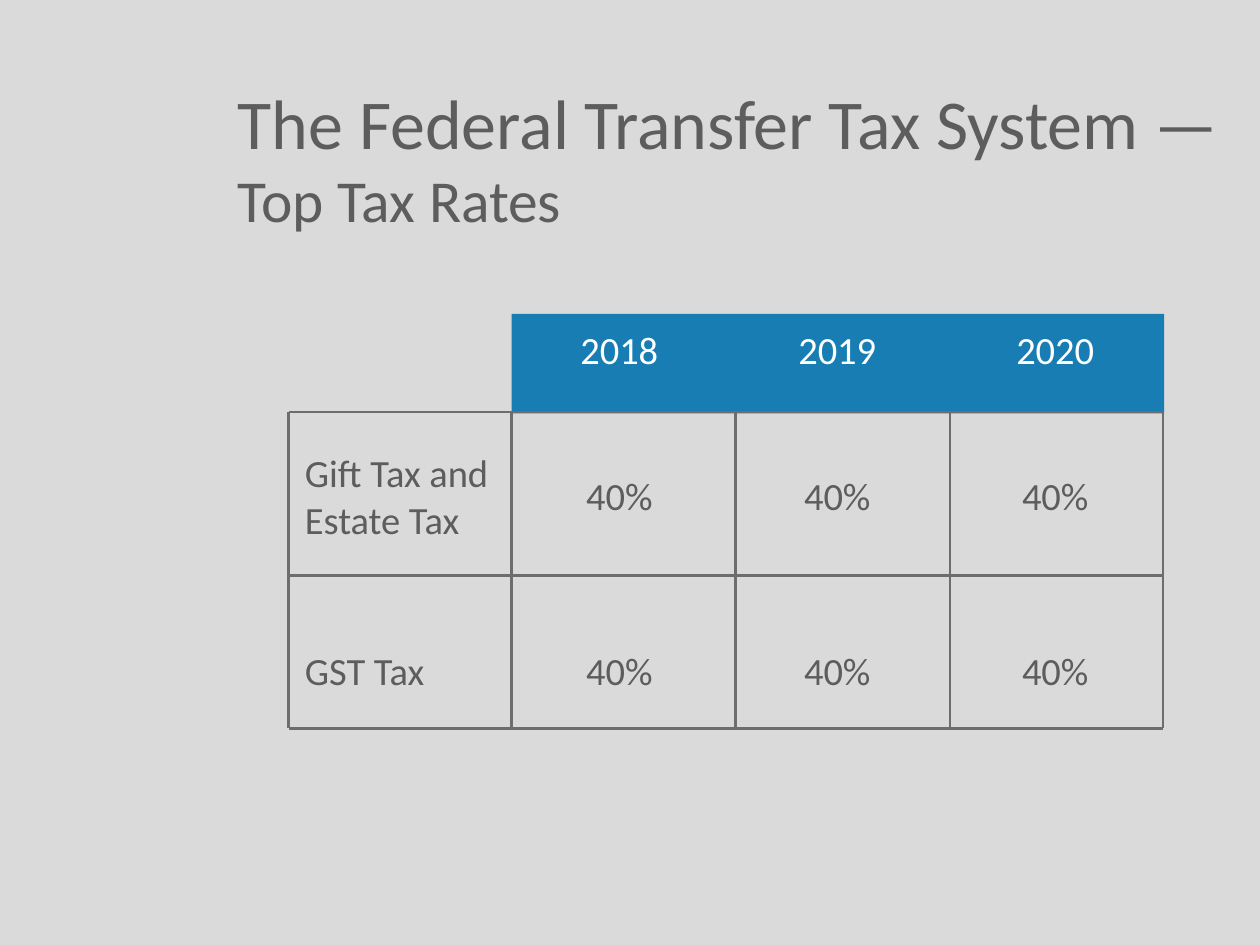
from lxml.etree import SubElement
from pptx import Presentation
from pptx.dml.color import RGBColor
from pptx.enum.shapes import MSO_CONNECTOR as Link, MSO_SHAPE as Shape
from pptx.enum.text import MSO_ANCHOR as Anchor, PP_ALIGN as Align
from pptx.oxml.ns import qn
from pptx.util import Inches, Pt

# Content
TITLE = [("The Federal Transfer Tax System —", 40), ("Top Tax Rates", 34)]
RATES = [
    ["", "2018", "2019", "2020"],
    ["Gift Tax and Estate Tax", "40%", "40%", "40%"],
    ["GST Tax", "40%", "40%", "40%"],
]
ROWS = [0.99, 1.34, 1.43]
COL = 1.73

# Ruled grid: line positions in inches
XS = [2.29, 4.06, 5.84, 7.54, 9.23]
YS = [3.27, 4.57, 5.78]

FONT = "Calibri"
NO_STYLE = "{2D5ABB26-0587-4C30-8999-92F81FD0307C}"
BACK = RGBColor(0xDA, 0xDA, 0xDA)
BLUE = RGBColor(0x17, 0x7D, 0xB3)
GRAY = RGBColor(0x5D, 0x5D, 0x5D)
RULE = RGBColor(0x6D, 0x6D, 0x6D)
WHITE = RGBColor(0xFF, 0xFF, 0xFF)


def write(para, text, size=22, color=GRAY, align=Align.LEFT):
    para.alignment = align
    run = para.add_run()
    run.text = text
    run.font.name = FONT
    run.font.size = Pt(size)
    run.font.color.rgb = color


def rule(slide, x1, y1, x2, y2):
    line = slide.shapes.add_connector(
        Link.STRAIGHT, Inches(x1), Inches(y1), Inches(x2), Inches(y2))
    line.line.color.rgb = RULE
    line.line.width = Pt(1.5)
    SubElement(line._element.spPr, qn("a:effectLst"))


def main():
    deck = Presentation()
    deck.slide_width, deck.slide_height = Inches(10), Inches(7.5)
    slide = deck.slides.add_slide(deck.slide_layouts[6])
    slide.background.fill.solid()
    slide.background.fill.fore_color.rgb = BACK

    # Header band
    band = slide.shapes.add_shape(
        Shape.RECTANGLE, Inches(XS[1]), Inches(2.49), Inches(5.18), Inches(0.79))
    band.shadow.inherit = False
    band.fill.solid()
    band.fill.fore_color.rgb = BLUE
    band.line.fill.background()

    # Title
    box = slide.shapes.add_textbox(
        Inches(1.79), Inches(0.58), Inches(7.99), Inches(1.33))
    frame = box.text_frame
    frame.word_wrap = True
    frame.vertical_anchor = Anchor.MIDDLE
    para = frame.paragraphs[0]
    for i, (text, size) in enumerate(TITLE):
        if i:
            para.add_line_break()
        write(para, text, size=size)

    # Rate table
    table = slide.shapes.add_table(
        len(ROWS), len(RATES[0]), Inches(2.32), Inches(2.29),
        Inches(COL * len(RATES[0])), Inches(sum(ROWS))).table
    table.first_row = table.horz_banding = False
    table._tbl.tblPr.find(qn("a:tableStyleId")).text = NO_STYLE
    for col in table.columns:
        col.width = Inches(COL)
    for r, row in enumerate(RATES):
        table.rows[r].height = Inches(ROWS[r])
        for c, text in enumerate(row):
            cell = table.cell(r, c)
            cell.fill.background()
            cell.vertical_anchor = Anchor.MIDDLE
            if text:
                write(cell.text_frame.paragraphs[0], text,
                      color=GRAY if r else WHITE,
                      align=Align.CENTER if c else Align.LEFT)

    # Grid rules
    for x in XS:
        rule(slide, x, YS[0], x, YS[-1])
    for y in YS:
        rule(slide, XS[0], y, XS[-1], y)

    deck.save("out.pptx")


if __name__ == "__main__":
    main()
